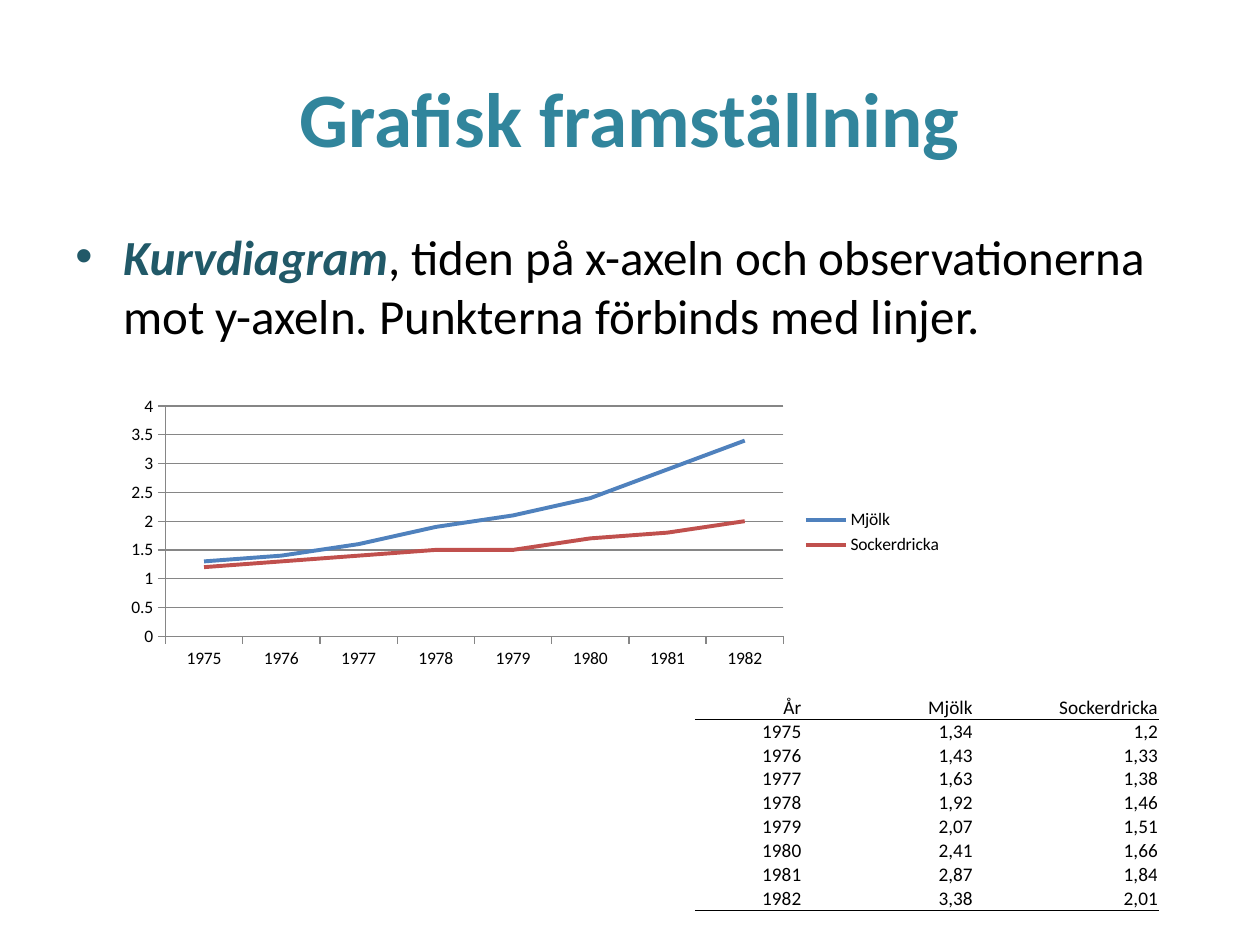
from lxml.etree import SubElement
from pptx import Presentation
from pptx.chart.data import CategoryChartData
from pptx.dml.color import RGBColor
from pptx.enum.chart import XL_CHART_TYPE, XL_LEGEND_POSITION, XL_TICK_MARK
from pptx.enum.text import MSO_ANCHOR, PP_ALIGN
from pptx.oxml import parse_xml
from pptx.oxml.ns import nsdecls, qn
from pptx.util import Inches, Pt

FONT = "Calibri"
COLORS = {"title": "31859C", "term": "215968", "text": "000000", "axis": "868686",
          "Mjölk": "4F81BD", "Sockerdricka": "C0504D"}
YEARS = [str(year) for year in range(1975, 1983)]
PRICES = {
    "Mjölk": [1.34, 1.43, 1.63, 1.92, 2.07, 2.41, 2.87, 3.38],
    "Sockerdricka": [1.2, 1.33, 1.38, 1.46, 1.51, 1.66, 1.84, 2.01],
}


def add_run(p, text, size=11, color="text", bold=False, italic=False):
    r = p.add_run()
    r.text = text
    r.font.name = FONT
    r.font.size = Pt(size)
    r.font.bold = bold
    r.font.italic = italic
    r.font.color.rgb = RGBColor.from_string(COLORS[color])


def add_border(cell, side):
    cell._tc.get_or_add_tcPr().insert(0, parse_xml(
        f'<a:{side} {nsdecls("a")} w="12700"><a:solidFill>'
        f'<a:srgbClr val="{COLORS["text"]}"/></a:solidFill></a:{side}>'))


prs = Presentation()
prs.slide_width, prs.slide_height = Inches(10), Inches(7.5)
s = prs.slides.add_slide(prs.slide_layouts[6])

# Title
tf = s.shapes.add_textbox(Inches(0.5), Inches(0.3), Inches(9), Inches(1.25)).text_frame
tf.word_wrap = True
tf.vertical_anchor = MSO_ANCHOR.MIDDLE
p = tf.paragraphs[0]
p.alignment = PP_ALIGN.CENTER
add_run(p, "Grafisk framställning", size=44, color="title", bold=True)

# Bulleted definition
tf = s.shapes.add_textbox(Inches(0.5), Inches(1.75), Inches(9), Inches(5.37)).text_frame
tf.word_wrap = True
p = tf.paragraphs[0]
p.space_before = Pt(5.6)
add_run(p, "Kurvdiagram", size=28, color="term", bold=True, italic=True)
add_run(p, ", tiden på x-axeln och observationerna mot y-axeln. "
           "Punkterna förbinds med linjer.", size=28)
pPr = p._p.get_or_add_pPr()
pPr.set("marL", str(Inches(0.38)))
pPr.set("indent", str(-Inches(0.38)))
SubElement(pPr, qn("a:buFont"), typeface="Arial")
SubElement(pPr, qn("a:buChar"), char="•")

# Line chart, values to one decimal
data = CategoryChartData()
data.categories = YEARS
for name, values in PRICES.items():
    data.add_series(name, [round(v, 1) for v in values])
chart = s.shapes.add_chart(XL_CHART_TYPE.LINE, Inches(0.91), Inches(3.1),
                           Inches(6.67), Inches(2.25), data).chart
chart.has_title = False
chart.font.name = FONT
chart.font.size = Pt(10)
chart.font.color.rgb = RGBColor.from_string(COLORS["text"])
chart.has_legend = True
chart.legend.position = XL_LEGEND_POSITION.RIGHT
chart.legend.include_in_layout = False
chart.plots[0].vary_by_categories = False
for series in chart.plots[0].series:
    series.smooth = False
    series.format.line.width = Pt(2.25)
    series.format.line.color.rgb = RGBColor.from_string(COLORS[series.name])

# Axes and gridlines
category, value = chart.category_axis, chart.value_axis
value.minimum_scale, value.maximum_scale, value.major_unit = 0, 4, 0.5
value.has_major_gridlines = True
for axis in (category, value):
    axis.major_tick_mark = XL_TICK_MARK.OUTSIDE
for part in (category, value, value.major_gridlines):
    part.format.line.width = Pt(0.75)
    part.format.line.color.rgb = RGBColor.from_string(COLORS["axis"])

# Table with two decimals and decimal commas
rows = [["År", *PRICES]]
for year, *values in zip(YEARS, *PRICES.values()):
    rows.append([year, *(str(v).replace(".", ",") for v in values)])
table = s.shapes.add_table(len(rows), 3, Inches(5.52), Inches(5.52),
                           Inches(3.67), Inches(0.19) * len(rows)).table
table.first_row = table.horz_banding = False
for column, width in zip(table.columns, (0.84, 1.36, 1.47)):
    column.width = Inches(width)
for i, row in enumerate(rows):
    for j, text in enumerate(row):
        cell = table.cell(i, j)
        cell.fill.background()
        cell.margin_left = cell.margin_right = cell.margin_top = cell.margin_bottom = 0
        cell.vertical_anchor = MSO_ANCHOR.BOTTOM
        p = cell.text_frame.paragraphs[0]
        p.alignment = PP_ALIGN.RIGHT
        add_run(p, text)
        if i in (0, len(rows) - 1):
            add_border(cell, "lnB")
        elif i == 1:
            add_border(cell, "lnT")

prs.save("out.pptx")
